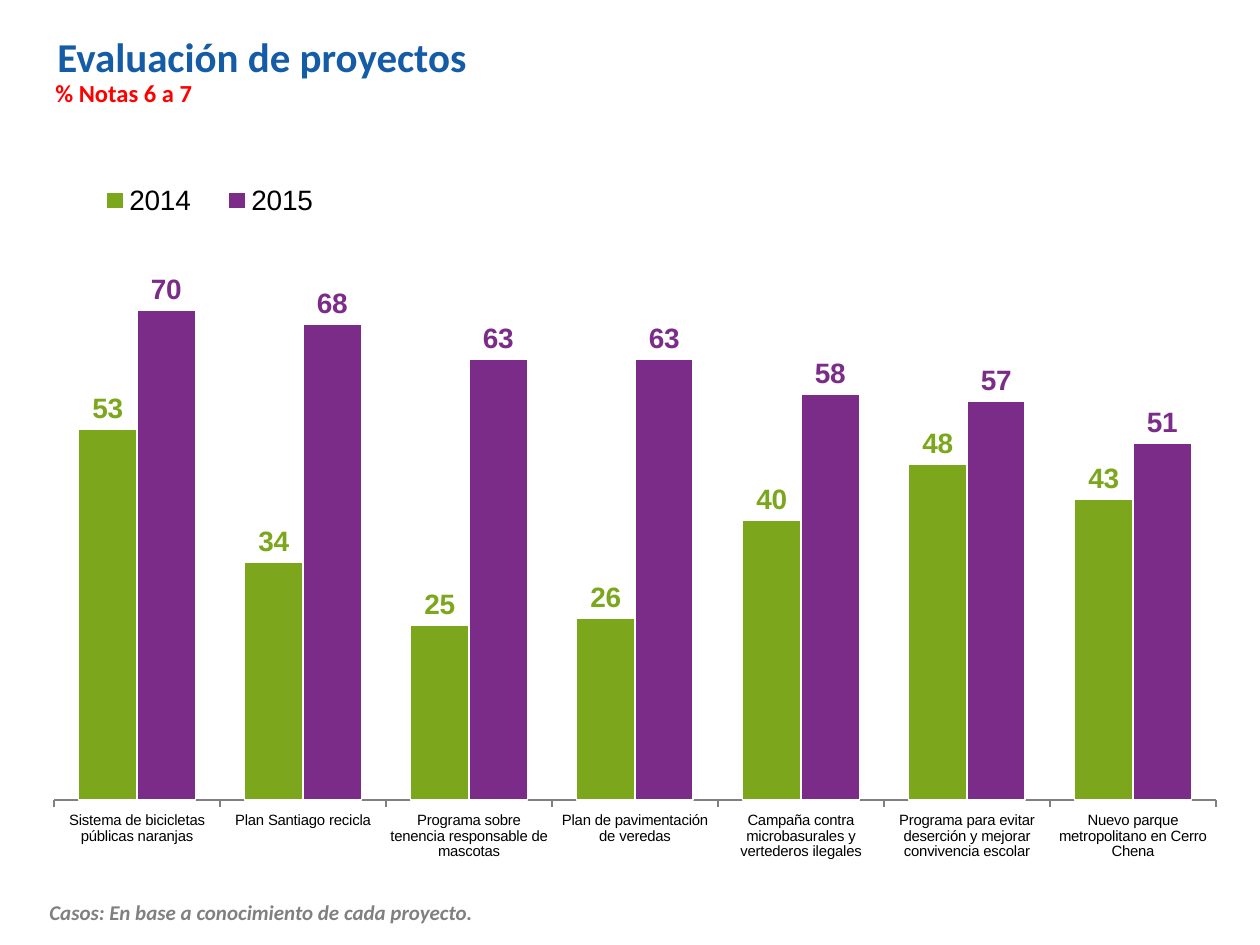
from dataclasses import dataclass

from lxml.etree import SubElement
from pptx import Presentation
from pptx.chart.data import CategoryChartData
from pptx.dml.color import RGBColor
from pptx.enum.chart import (XL_CHART_TYPE, XL_LABEL_POSITION,
                             XL_LEGEND_POSITION, XL_TICK_LABEL_POSITION,
                             XL_TICK_MARK)
from pptx.enum.text import MSO_ANCHOR, PP_ALIGN
from pptx.oxml.ns import qn
from pptx.util import Pt

PX = 914400 / 126
HUES = {"blue": "155CA7", "red": "FF0000", "gray": "808080", "black": "000000",
        "white": "FFFFFF", "green": "7CA71D", "purple": "7B2C88"}


@dataclass(frozen=True)
class Box:
    left: int
    top: int
    width: int
    height: int

    def emu(self) -> list[int]:
        return [round(n * PX) for n in
                (self.left, self.top, self.width, self.height)]


@dataclass(frozen=True)
class Year:
    name: str
    hue: str
    edge: float
    marks: tuple[int, ...]


TOPICS = (
    "Sistema de bicicletas públicas naranjas",
    "Plan Santiago recicla",
    "Programa sobre tenencia responsable de mascotas",
    "Plan de pavimentación de veredas",
    "Campaña contra microbasurales y vertederos ilegales",
    "Programa para evitar deserción y mejorar convivencia escolar",
    "Nuevo parque metropolitano en Cerro Chena",
)
YEARS = (
    Year("2014", "green", 0.75, (53, 34, 25, 26, 40, 48, 43)),
    Year("2015", "purple", 1, (70, 68, 63, 63, 58, 57, 51)),
)


def color(hue: str) -> RGBColor:
    return RGBColor.from_string(HUES[hue])


def style(font, size: float, hue: str, face: str = "Arial",
          bold: bool = False, italic: bool = False) -> None:
    font.name, font.size = face, Pt(size)
    font.bold, font.italic = bold, italic
    font.color.rgb = color(hue)


def write(slide, box: Box, text: str, *, size: float, hue: str,
          italic: bool = False, wrap: bool = True,
          align=PP_ALIGN.LEFT, anchor=MSO_ANCHOR.TOP) -> None:
    frame = slide.shapes.add_textbox(*box.emu()).text_frame
    frame.word_wrap, frame.vertical_anchor = wrap, anchor
    para = frame.paragraphs[0]
    para.alignment = align
    run = para.add_run()
    run.text = text
    style(run.font, size, hue, "Calibri", bold=True, italic=italic)


def place(part, index: int, spots: dict[str, float], inner: bool) -> None:
    """Give a chart part a fixed layout, as shares of the chart."""
    for old in part.findall(qn("c:layout")):
        part.remove(old)
    layout = SubElement(part, qn("c:layout"))
    part.insert(index, layout)
    manual = SubElement(layout, qn("c:manualLayout"))
    if inner:
        SubElement(manual, qn("c:layoutTarget")).set("val", "inner")
    for mode in ("xMode", "yMode"):
        SubElement(manual, qn(f"c:{mode}")).set("val", "edge")
    for key, share in spots.items():
        SubElement(manual, qn(f"c:{key}")).set("val", str(share))


def paint(series, year: Year) -> None:
    series.format.fill.solid()
    series.format.fill.fore_color.rgb = color(year.hue)
    series.format.line.color.rgb = color("white")
    series.format.line.width = Pt(year.edge)
    series.invert_if_negative = False
    labels = series.data_labels
    labels.show_value = True
    labels.position = XL_LABEL_POSITION.OUTSIDE_END
    labels.number_format, labels.number_format_is_linked = "0", False
    style(labels.font, 16, year.hue, bold=True)


def draw_chart(slide, box: Box) -> None:
    data = CategoryChartData(number_format="0")
    data.categories = TOPICS
    for year in YEARS:
        data.add_series(year.name, year.marks)
    chart = slide.shapes.add_chart(
        XL_CHART_TYPE.COLUMN_CLUSTERED, *box.emu(), data).chart
    style(chart.font, 12, "black", "Calibri")
    chart.has_title = False

    plot = chart.plots[0]
    plot.gap_width, plot.overlap, plot.vary_by_categories = 84, 0, False
    for series, year in zip(plot.series, YEARS):
        paint(series, year)

    axis = chart.category_axis
    axis.major_tick_mark = XL_TICK_MARK.OUTSIDE
    axis.tick_label_position = XL_TICK_LABEL_POSITION.LOW
    axis.format.line.color.rgb = color("gray")
    style(axis.tick_labels.font, 8.5, "black")

    scale = chart.value_axis
    scale.minimum_scale, scale.maximum_scale = 0, 80
    scale.has_major_gridlines = scale.visible = False

    chart.has_legend = True
    legend = chart.legend
    legend.position = XL_LEGEND_POSITION.TOP
    legend.include_in_layout = False
    style(legend.font, 16, "black")
    place(legend._element, 1,
          {"x": 0.04, "y": 0.02, "w": 0.22, "h": 0.07}, inner=False)
    area = chart._chartSpace.chart.plotArea
    place(area, 0, {"x": 0.02, "y": 0.11, "w": 0.97, "h": 0.78}, inner=True)


def main() -> None:
    deck = Presentation()
    deck.slide_width, deck.slide_height = round(1260 * PX), round(945 * PX)
    slide = deck.slides.add_slide(deck.slide_layouts[6])
    write(slide, Box(45, 16, 1017, 81), "Evaluación de proyectos",
          size=23.4, hue="blue", anchor=MSO_ANCHOR.MIDDLE)
    draw_chart(slide, Box(30, 161, 1198, 718))
    write(slide, Box(43, 72, 1029, 43), "% Notas 6 a 7",
          size=14, hue="red", align=PP_ALIGN.JUSTIFY)
    write(slide, Box(37, 893, 530, 38),
          "Casos: En base a conocimiento de cada proyecto.",
          size=12, hue="gray", italic=True, wrap=False)
    deck.save("out.pptx")


if __name__ == "__main__":
    main()
